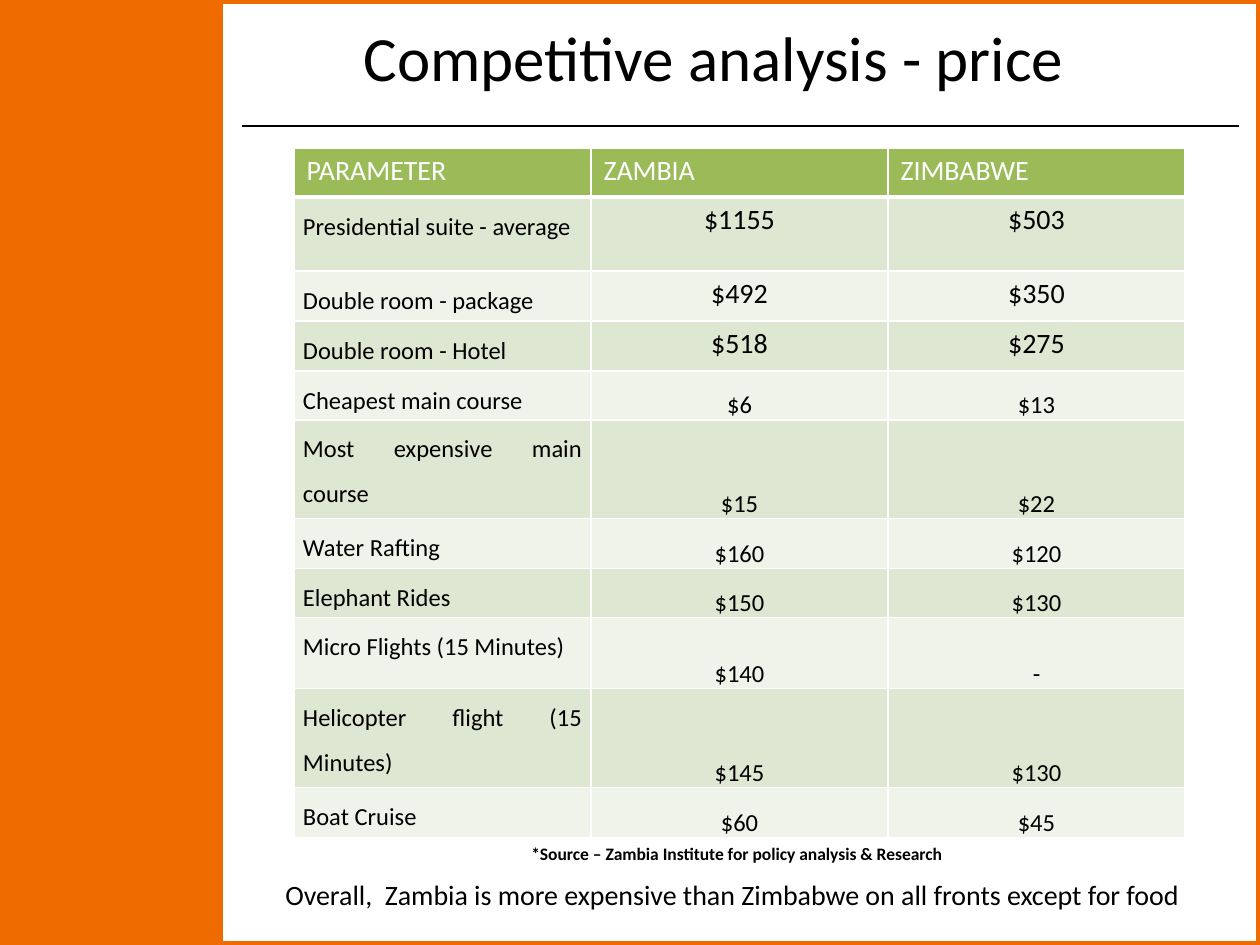
"""Build the slide comparing Zambian and Zimbabwean prices."""
from dataclasses import dataclass

from lxml import etree
from pptx import Presentation
from pptx import util as u
from pptx.dml.color import RGBColor
from pptx.enum import shapes, text
from pptx.oxml.ns import qn

ORANGE = RGBColor(0xEF, 0x6B, 0x00)
GREEN = RGBColor(0x9B, 0xBB, 0x59)
BANDS = (RGBColor(0xDE, 0xE7, 0xD1), RGBColor(0xEF, 0xF3, 0xEA))
BLACK = RGBColor(0, 0, 0)
WHITE = RGBColor(0xFF, 0xFF, 0xFF)
FONT = "Calibri"
ALIGN = text.PP_ALIGN
ANCHOR = text.MSO_ANCHOR
EMU_PER_PX = 914400 / 126


@dataclass(frozen=True)
class PriceRow:
    item: str
    zambia: str
    zimbabwe: str
    height: int = 50
    lodging: bool = False


HEADINGS = ("PARAMETER", "ZAMBIA", "ZIMBABWE")
HEADING_HEIGHT = 49
COLUMN_WIDTH = 297
PRICES = (
    PriceRow("Presidential suite - average", "$1155", "$503", 74, True),
    PriceRow("Double room - package", "$492", "$350", lodging=True),
    PriceRow("Double room - Hotel", "$518", "$275", lodging=True),
    PriceRow("Cheapest main course", "$6", "$13", 49),
    PriceRow("Most expensive main course", "$15", "$22", 99),
    PriceRow("Water Rafting", "$160", "$120"),
    PriceRow("Elephant Rides", "$150", "$130", 49),
    PriceRow("Micro Flights (15 Minutes)", "$140", "-", 71),
    PriceRow("Helicopter flight (15 Minutes)", "$145", "$130", 99),
    PriceRow("Boat Cruise", "$60", "$45"),
)


def px(length: int) -> u.Emu:
    """Turn pixels into EMU."""
    return u.Emu(round(length * EMU_PER_PX))


def write(frame, words: str, size: int, color=BLACK, align=ALIGN.LEFT, bold=False) -> None:
    """Put one formatted paragraph into a text frame."""
    frame.text = words
    paragraph = frame.paragraphs[0]
    paragraph.alignment = align
    font = paragraph.font
    font.name, font.size, font.bold = FONT, u.Pt(size), bold
    font.color.rgb = color


def add_panel(slide, width: int, line_width: int, filled: bool) -> None:
    """Draw a full-height orange rectangle from the left edge."""
    panel = slide.shapes.add_shape(shapes.MSO_SHAPE.RECTANGLE, 0, 0, px(width), px(945))
    panel.shadow.inherit = False
    if filled:
        panel.fill.solid()
        panel.fill.fore_color.rgb = ORANGE
    else:
        panel.fill.background()
    panel.line.color.rgb = ORANGE
    panel.line.width = u.Pt(line_width)


def add_rule(slide) -> None:
    """Draw the line under the title."""
    rule = slide.shapes.add_connector(
        shapes.MSO_CONNECTOR.STRAIGHT, px(242), px(126), px(1239), px(126))
    rule.line.color.rgb = BLACK
    rule.line.width = u.Pt(1)
    etree.SubElement(rule.element.spPr, qn("a:effectLst"))


def add_note(slide, left: int, top: int, width: int, height: int,
             words: str, size: int, wrap: bool, bold: bool = False) -> None:
    """Add a line of text below the table."""
    note = slide.shapes.add_textbox(px(left), px(top), px(width), px(height))
    note.text_frame.word_wrap = wrap
    write(note.text_frame, words, size, bold=bold)


def style_cell(cell, fill: RGBColor, bottom_width: int = 1) -> None:
    """Give a cell white borders and a solid fill."""
    properties = cell._tc.get_or_add_tcPr()
    for side, width in (("L", 1), ("R", 1), ("T", 1), ("B", bottom_width)):
        border = etree.SubElement(properties, qn(f"a:ln{side}"), w=str(u.Pt(width)))
        solid = etree.SubElement(border, qn("a:solidFill"))
        etree.SubElement(solid, qn("a:srgbClr"), val=str(WHITE))
    cell.fill.solid()
    cell.fill.fore_color.rgb = fill


def space_cell(cell) -> None:
    """Set narrow margins and one-and-a-half line spacing."""
    cell.margin_left = cell.margin_right = px(9)
    cell.margin_top = cell.margin_bottom = 0
    cell.text_frame.paragraphs[0].line_spacing = 1.5


def add_prices(slide) -> None:
    """Add the price table."""
    heights = [HEADING_HEIGHT, *(row.height for row in PRICES)]
    table = slide.shapes.add_table(
        len(heights), len(HEADINGS), px(294), px(148),
        px(COLUMN_WIDTH * len(HEADINGS)), px(sum(heights))).table
    for column in table.columns:
        column.width = px(COLUMN_WIDTH)
    for table_row, height in zip(table.rows, heights):
        table_row.height = px(height)
    for column, heading in enumerate(HEADINGS):
        cell = table.cell(0, column)
        write(cell.text_frame, heading, 16, WHITE)
        style_cell(cell, GREEN, bottom_width=3)
    for index, row in enumerate(PRICES):
        fill = BANDS[index % 2]
        item = table.cell(index + 1, 0)
        write(item.text_frame, row.item, 14, align=ALIGN.JUSTIFY)
        space_cell(item)
        style_cell(item, fill)
        for column, amount in enumerate((row.zambia, row.zimbabwe), start=1):
            price = table.cell(index + 1, column)
            write(price.text_frame, amount, 16 if row.lodging else 14, align=ALIGN.CENTER)
            if not row.lodging:
                space_cell(price)
                price.vertical_anchor = ANCHOR.BOTTOM
            style_cell(price, fill)


def main() -> None:
    """Build and save the presentation."""
    deck = Presentation()
    deck.slide_width, deck.slide_height = px(1260), px(945)
    slide = deck.slides.add_slide(deck.slide_layouts[5])
    add_panel(slide, 1260, 5, filled=False)
    add_panel(slide, 221, 2, filled=True)
    add_rule(slide)
    title = slide.shapes.title
    title.left, title.top, title.width, title.height = px(221), px(8), px(985), px(97)
    title.text_frame.vertical_anchor = ANCHOR.MIDDLE
    write(title.text_frame, "Competitive analysis - price", 36, align=ALIGN.CENTER)
    add_prices(slide)
    add_note(slide, 519, 837, 442, 34,
             "*Source – Zambia Institute for policy analysis & Research", 10, False, bold=True)
    add_note(slide, 273, 871, 945, 47,
             "Overall,  Zambia is more expensive than Zimbabwe on all fronts except for food",
             16, True)
    deck.save("out.pptx")


if __name__ == "__main__":
    main()
